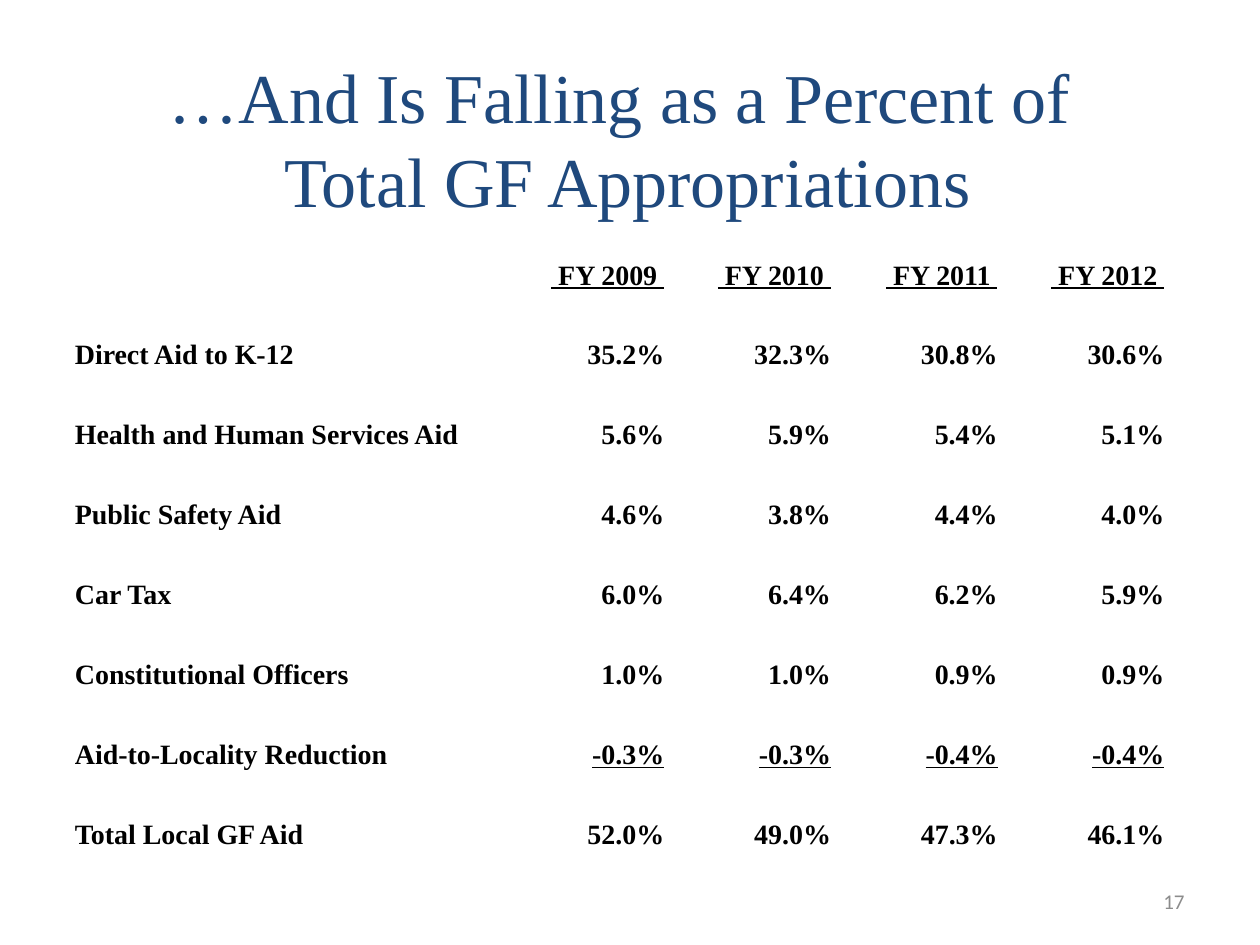
from pptx import Presentation
from pptx.dml.color import RGBColor
from pptx.enum.text import MSO_ANCHOR, PP_ALIGN
from pptx.util import Cm, Pt

COLORS = {"title": "1F497D", "body": "000000", "number": "8C8C8C"}
SERIF = "Times New Roman"

TITLE_LINES = ["…And Is Falling as a Percent of", " Total GF Appropriations"]
AID_SHARES = [
    ["", " FY 2009 ", " FY 2010 ", " FY 2011 ", " FY 2012 "],
    ["Direct Aid to K-12", "35.2%", "32.3%", "30.8%", "30.6%"],
    ["Health and Human Services Aid", "5.6%", "5.9%", "5.4%", "5.1%"],
    ["Public Safety Aid", "4.6%", "3.8%", "4.4%", "4.0%"],
    ["Car Tax", "6.0%", "6.4%", "6.2%", "5.9%"],
    ["Constitutional Officers", "1.0%", "1.0%", "0.9%", "0.9%"],
    ["Aid-to-Locality Reduction", "-0.3%", "-0.3%", "-0.4%", "-0.4%"],
    ["Total Local GF Aid", "52.0%", "49.0%", "47.3%", "46.1%"],
]
COLUMN_WIDTHS = [8.64, 3.3, 3.36, 3.36, 3.36]
HEADER_HEIGHT, ROW_HEIGHT = 1, 1.61
UNDERLINED_ROWS = {0, len(AID_SHARES) - 2}


def write_text(paragraph, text, *, size, color, font=SERIF, bold=False,
               underline=False, align=PP_ALIGN.LEFT, line_spacing=None):
    paragraph.alignment = align
    paragraph.line_spacing = line_spacing
    run = paragraph.add_run()
    run.text = text
    run.font.name = font
    run.font.size = Pt(size)
    run.font.bold = bold
    run.font.underline = underline
    run.font.color.rgb = RGBColor.from_string(COLORS[color])


def add_text_frame(slide, box, anchor):
    frame = slide.shapes.add_textbox(*map(Cm, box)).text_frame
    frame.word_wrap = True
    frame.vertical_anchor = anchor
    return frame


def add_title(slide, box):
    frame = add_text_frame(slide, box, MSO_ANCHOR.TOP)
    frame.margin_top = Cm(0.22)
    for index, line in enumerate(TITLE_LINES):
        paragraph = frame.add_paragraph() if index else frame.paragraphs[0]
        write_text(paragraph, line, size=40, color="title",
                   align=PP_ALIGN.CENTER, line_spacing=Pt(48))


def add_aid_table(slide, left, top):
    row_heights = [HEADER_HEIGHT] + [ROW_HEIGHT] * (len(AID_SHARES) - 1)
    table = slide.shapes.add_table(
        len(row_heights), len(COLUMN_WIDTHS), Cm(left), Cm(top),
        Cm(sum(COLUMN_WIDTHS)), Cm(sum(row_heights))).table
    table.first_row = table.horz_banding = False
    for column, width in zip(table.columns, COLUMN_WIDTHS):
        column.width = Cm(width)
    for row, height in zip(table.rows, row_heights):
        row.height = Cm(height)
    for row_index, values in enumerate(AID_SHARES):
        for column_index, value in enumerate(values):
            is_figure = column_index > 0
            cell = table.cell(row_index, column_index)
            cell.fill.solid()
            cell.fill.fore_color.rgb = RGBColor.from_string("FFFFFF")
            cell.vertical_anchor = MSO_ANCHOR.BOTTOM
            cell.margin_left = cell.margin_right = cell.margin_top = Cm(0.03)
            cell.margin_bottom = 0
            write_text(cell.text_frame.paragraphs[0], value, size=16,
                       color="body", bold=True,
                       underline=is_figure and row_index in UNDERLINED_ROWS,
                       align=PP_ALIGN.RIGHT if is_figure else PP_ALIGN.LEFT)


def add_slide_number(slide, box):
    frame = add_text_frame(slide, box, MSO_ANCHOR.MIDDLE)
    write_text(frame.paragraphs[0], "17", size=12, color="number",
               font="Calibri", align=PP_ALIGN.RIGHT)


def main():
    presentation = Presentation()
    presentation.slide_width, presentation.slide_height = Cm(25.4), Cm(19.05)
    slide = presentation.slides.add_slide(presentation.slide_layouts[6])
    add_slide_number(slide, (18.2, 17.66, 5.93, 1.01))
    add_title(slide, (1.69, 0.85, 21.59, 2.96))
    add_aid_table(slide, 1.48, 4.87)
    presentation.save("out.pptx")


if __name__ == "__main__":
    main()
